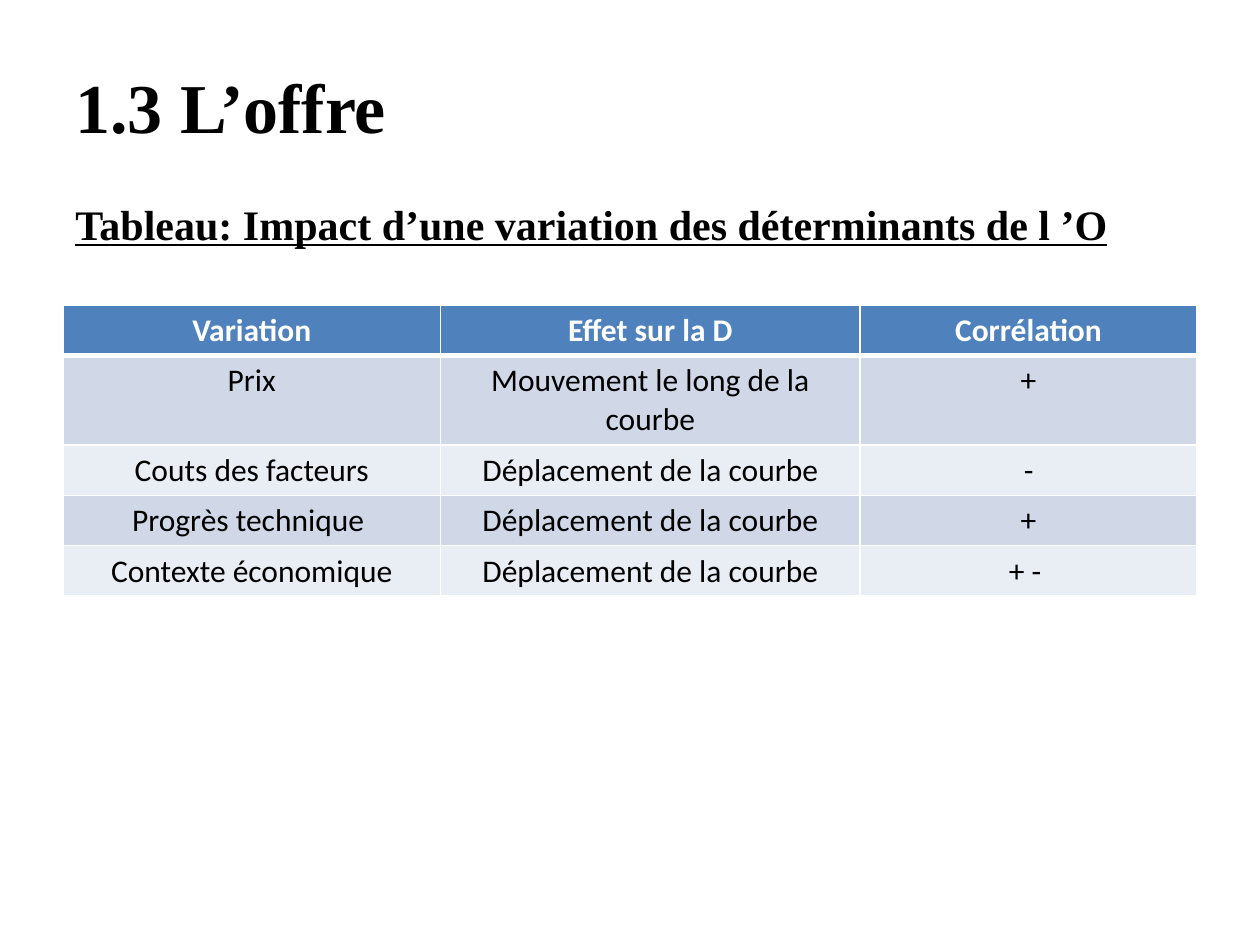
"""Build the slide on supply: a title, a subtitle and the table of determinants."""
from lxml.etree import SubElement
from pptx import Presentation
from pptx.dml.color import RGBColor
from pptx.enum.text import MSO_ANCHOR, PP_ALIGN
from pptx.oxml.ns import qn
from pptx.util import Inches, Pt


def style(r, font, size, color, bold):
    r.font.name, r.font.size, r.font.bold = font, Pt(size), bold
    r.font.color.rgb = RGBColor.from_string(color)


def border(cell, side, width, color="FFFFFF"):
    ln = SubElement(cell._tc.get_or_add_tcPr(), qn(f"a:ln{side}"), w=str(Pt(width)))
    SubElement(SubElement(ln, qn("a:solidFill")), qn("a:srgbClr"), val=color)


prs = Presentation()
prs.slide_width, prs.slide_height = Inches(10), Inches(7.5)
W, H = prs.slide_width, prs.slide_height
LEFT, WIDTH = int(W * 0.05), int(W * 0.9)
s = prs.slides.add_slide(prs.slide_layouts[6])

tf = s.shapes.add_textbox(LEFT, int(H * 0.04), WIDTH, Inches(1.78)).text_frame
tf.word_wrap = True
tf.vertical_anchor = MSO_ANCHOR.MIDDLE
tf.margin_top = Inches(0.15)
p = tf.paragraphs[0]
r = p.add_run()
r.text = "1.3 L’offre"
style(r, "Times New Roman", 40, "000000", True)
p = tf.add_paragraph()
p.space_before = Pt(29)
r = p.add_run()
r.text = "Tableau: Impact d’une variation des déterminants de l ’O"
style(r, "Times New Roman", 24, "000000", True)
r.font.underline = True

SHIFT = "Déplacement de la courbe"
rows = [
    ("Variation", "Effet sur la D", "Corrélation"),
    ("Prix", "Mouvement le long de la courbe", "+"),
    ("Couts des facteurs", SHIFT, "-"),
    ("Progrès technique ", SHIFT, "+"),
    ("Contexte économique", SHIFT, "+ - "),
]
shares = [0.333, 0.37, 0.297]
heights = [0.4, 0.71, 0.4, 0.4, 0.4]
bands = ["E9EDF4", "D0D8E8"]

tbl = s.shapes.add_table(len(rows), len(shares), LEFT, Inches(2.42),
                         WIDTH, Inches(sum(heights))).table
for col, share in zip(tbl.columns, shares):
    col.width = int(WIDTH * share)
for i, (row, height) in enumerate(zip(rows, heights)):
    head = i == 0
    tbl.rows[i].height = Inches(height)
    for j, text in enumerate(row):
        cell = tbl.cell(i, j)
        for side in "LRTB":
            thick = (head and side == "B") or (i == 1 and side == "T")
            border(cell, side, 3 if thick else 1)
        cell.fill.solid()
        cell.fill.fore_color.rgb = RGBColor.from_string("4F81BD" if head else bands[i % 2])
        p = cell.text_frame.paragraphs[0]
        p.alignment = PP_ALIGN.CENTER
        r = p.add_run()
        r.text = text
        style(r, "Calibri", 18, "FFFFFF" if head else "000000", head)

prs.save("out.pptx")
